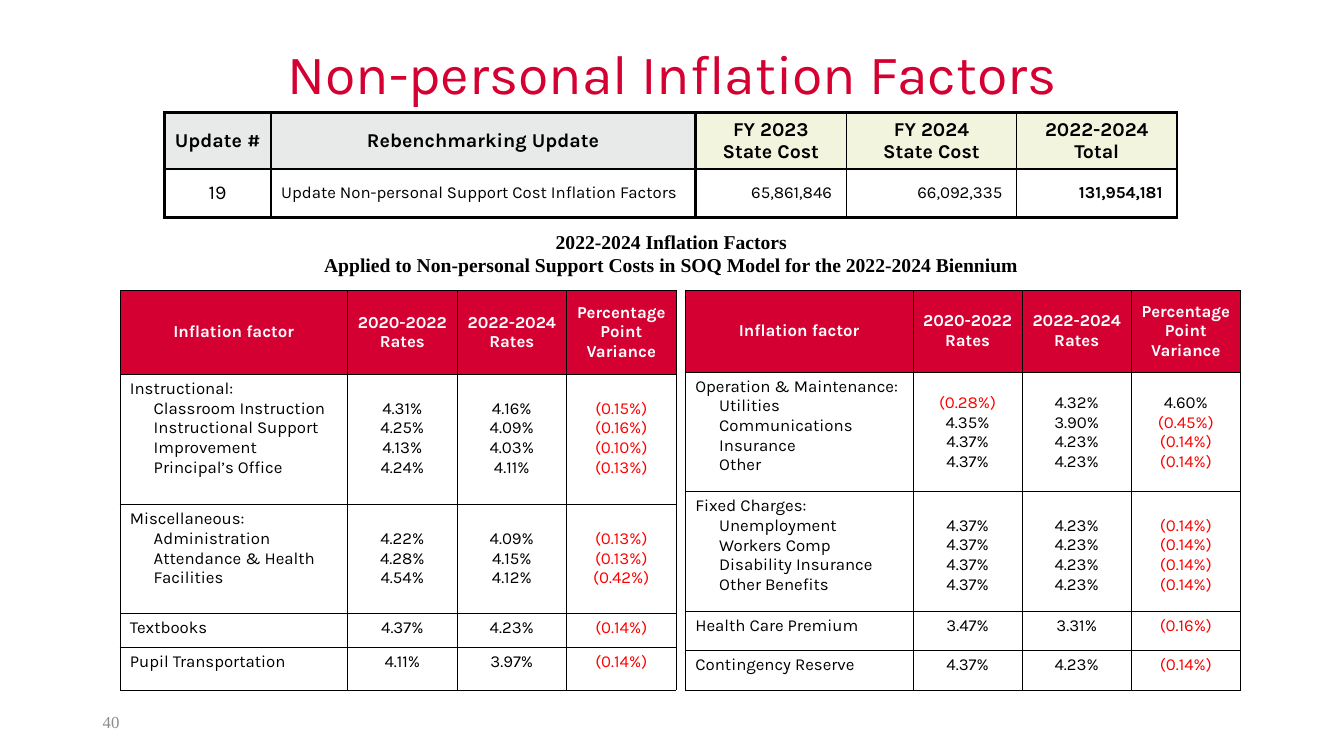
from lxml.etree import SubElement
from pptx import Presentation
from pptx.dml.color import RGBColor
from pptx.enum.text import MSO_ANCHOR, MSO_AUTO_SIZE, PP_ALIGN
from pptx.oxml.ns import qn
from pptx.util import Cm, Pt

COLORS = {
    "crimson": "D50032",
    "negative": "FF0000",
    "black": "000000",
    "white": "FFFFFF",
    "gray": "E8EAE9",
    "cream": "F3F4DE",
    "page": "8C8C8C",
}
LEFT, CENTER, RIGHT = PP_ALIGN.LEFT, PP_ALIGN.CENTER, PP_ALIGN.RIGHT


def write(frame, lines, size=12, align=CENTER, color="black", bold=False, font="Karla"):
    for index, line in enumerate(lines):
        paragraph = frame.paragraphs[0] if index == 0 else frame.add_paragraph()
        paragraph.text = line
        paragraph.alignment = align
        paragraph.font.name = font
        paragraph.font.size = Pt(size)
        paragraph.font.bold = bold
        paragraph.font.color.rgb = RGBColor.from_string(COLORS[color])


def style_cell(cell, fill, left, right, top, bottom):
    properties = cell._tc.get_or_add_tcPr()
    for side, width in zip("LRTB", (left, right, top, bottom)):
        line = SubElement(properties, qn(f"a:ln{side}"), w=str(Pt(width)))
        solid = SubElement(line, qn("a:solidFill"))
        SubElement(solid, qn("a:srgbClr"), val=COLORS["black"])
    if fill:
        cell.fill.solid()
        cell.fill.fore_color.rgb = RGBColor.from_string(COLORS[fill])
    else:
        cell.fill.background()


presentation = Presentation()
presentation.slide_width = Cm(33.87)
presentation.slide_height = Cm(19.05)
slide = presentation.slides.add_slide(presentation.slide_layouts[5])

title = slide.shapes.title
title.left, title.top, title.width, title.height = Cm(2.34), Cm(1.02), Cm(29.21), Cm(1.8)
title.text_frame.auto_size = MSO_AUTO_SIZE.NONE
title.text_frame.vertical_anchor = MSO_ANCHOR.MIDDLE
write(title.text_frame, ["Non-personal Inflation Factors"], size=39.6, color="crimson")
title.text_frame.paragraphs[0].line_spacing = 0.9

update_columns = [
    (2.69, "gray", ["Update #"], "19", CENTER),
    (10.69, "gray", ["Rebenchmarking Update"],
     "Update Non-personal Support Cost Inflation Factors", LEFT),
    (3.81, "cream", ["FY 2023", "State Cost"], "65,861,846", RIGHT),
    (4.29, "cream", ["FY 2024", "State Cost"], "66,092,335", RIGHT),
    (4.04, "cream", ["2022-2024 Total"], "131,954,181", RIGHT),
]
update_table = slide.shapes.add_table(2, 5, Cm(4.14), Cm(2.84), Cm(25.52), Cm(2.64)).table
update_table.rows[0].height = Cm(1.42)
update_table.rows[1].height = Cm(1.22)
edge_widths = [2.25, 1, 2.25, 1, 1, 2.25]
for column, (width, fill, heading, value, align) in enumerate(update_columns):
    update_table.columns[column].width = Cm(width)
    edges = edge_widths[column:column + 2]
    header, body = update_table.cell(0, column), update_table.cell(1, column)
    style_cell(header, fill, *edges, 2.25, 1)
    style_cell(body, None, *edges, 1, 2.25)
    header.vertical_anchor = body.vertical_anchor = MSO_ANCHOR.MIDDLE
    body.margin_top = body.margin_bottom = 0
    if align == RIGHT:
        body.margin_right = Cm(0.36)
    write(header.text_frame, heading, size=14, bold=True)
    write(body.text_frame, [value], size=14 if column == 0 else 12,
          align=align, bold=column == 4)

caption = slide.shapes.add_textbox(Cm(7.85), Cm(5.66), Cm(18.14), Cm(1.45)).text_frame
caption.word_wrap = False
write(caption, ["2022-2024 Inflation Factors",
                "Applied to Non-personal Support Costs in SOQ Model for the 2022-2024 Biennium"],
      size=14, bold=True, font="Times New Roman")

factor_headings = [
    ["Inflation factor"],
    ["2020-2022", "Rates"],
    ["2022-2024", "Rates"],
    ["Percentage", "Point", "Variance"],
]
factor_tables = [
    (3.02, 2.76, [2.11, 3.28, 2.74, 0.86, 1.07], [
        (["Instructional:", "Classroom Instruction", "Instructional Support",
          "Improvement", "Principal’s Office"], 0.62,
         ["4.31%", "4.25%", "4.13%", "4.24%"],
         ["4.16%", "4.09%", "4.03%", "4.11%"],
         ["(0.15%)", "(0.16%)", "(0.10%)", "(0.13%)"]),
        (["Miscellaneous:", "Administration", "Attendance & Health", "Facilities"], 0.62,
         ["4.22%", "4.28%", "4.54%"],
         ["4.09%", "4.15%", "4.12%"],
         ["(0.13%)", "(0.13%)", "(0.42%)"]),
        (["Textbooks"], 0.13, ["4.37%"], ["4.23%"], ["(0.14%)"]),
        (["Pupil Transportation"], 0.13, ["4.11%"], ["3.97%"], ["(0.14%)"]),
    ]),
    (17.27, 2.75, [2.05, 3.01, 3.01, 1, 1], [
        (["Operation & Maintenance:", "Utilities", "Communications",
          "Insurance", "Other"], 0.54,
         ["(0.28%)", "4.35%", "4.37%", "4.37%"],
         ["4.32%", "3.90%", "4.23%", "4.23%"],
         ["4.60%", "(0.45%)", "(0.14%)", "(0.14%)"]),
        (["Fixed Charges:", "Unemployment", "Workers Comp",
          "Disability Insurance", "Other Benefits"], 0.62,
         ["4.37%"] * 4, ["4.23%"] * 4, ["(0.14%)"] * 4),
        (["Health Care Premium"], 0.13, ["3.47%"], ["3.31%"], ["(0.16%)"]),
        (["Contingency Reserve"], 0.13, ["4.37%"], ["4.23%"], ["(0.14%)"]),
    ]),
]
for left, rate_width, heights, groups in factor_tables:
    factors = slide.shapes.add_table(5, 4, Cm(left), Cm(7.32),
                                     Cm(5.74 + 3 * rate_width), Cm(sum(heights))).table
    for row, height in zip(factors.rows, heights):
        row.height = Cm(height)
    for column, heading in enumerate(factor_headings):
        factors.columns[column].width = Cm(rate_width if column else 5.74)
        header = factors.cell(0, column)
        style_cell(header, "crimson", *[0.25] * 4)
        header.vertical_anchor = MSO_ANCHOR.MIDDLE
        write(header.text_frame, heading, color="white", bold=True)
    for row, (names, rates_top, *rates) in enumerate(groups, start=1):
        for column, lines in enumerate([names, *rates]):
            cell = factors.cell(row, column)
            style_cell(cell, None, *[0.25] * 4)
            write(cell.text_frame, lines, align=CENTER if column else LEFT)
            if column:
                cell.margin_top = Cm(rates_top)
            for index, paragraph in enumerate(cell.text_frame.paragraphs):
                if paragraph.text.startswith("("):
                    paragraph.font.color.rgb = RGBColor.from_string(COLORS["negative"])
                if column == 0 and index > 0:
                    paragraph._p.get_or_add_pPr().set("marL", str(Cm(0.6)))

page_number = slide.shapes.add_textbox(Cm(2.34), Cm(17.68), Cm(7.62), Cm(1.02)).text_frame
page_number.word_wrap = True
page_number.vertical_anchor = MSO_ANCHOR.MIDDLE
write(page_number, ["40"], align=LEFT, color="page", font="Times New Roman")

presentation.save("out.pptx")
